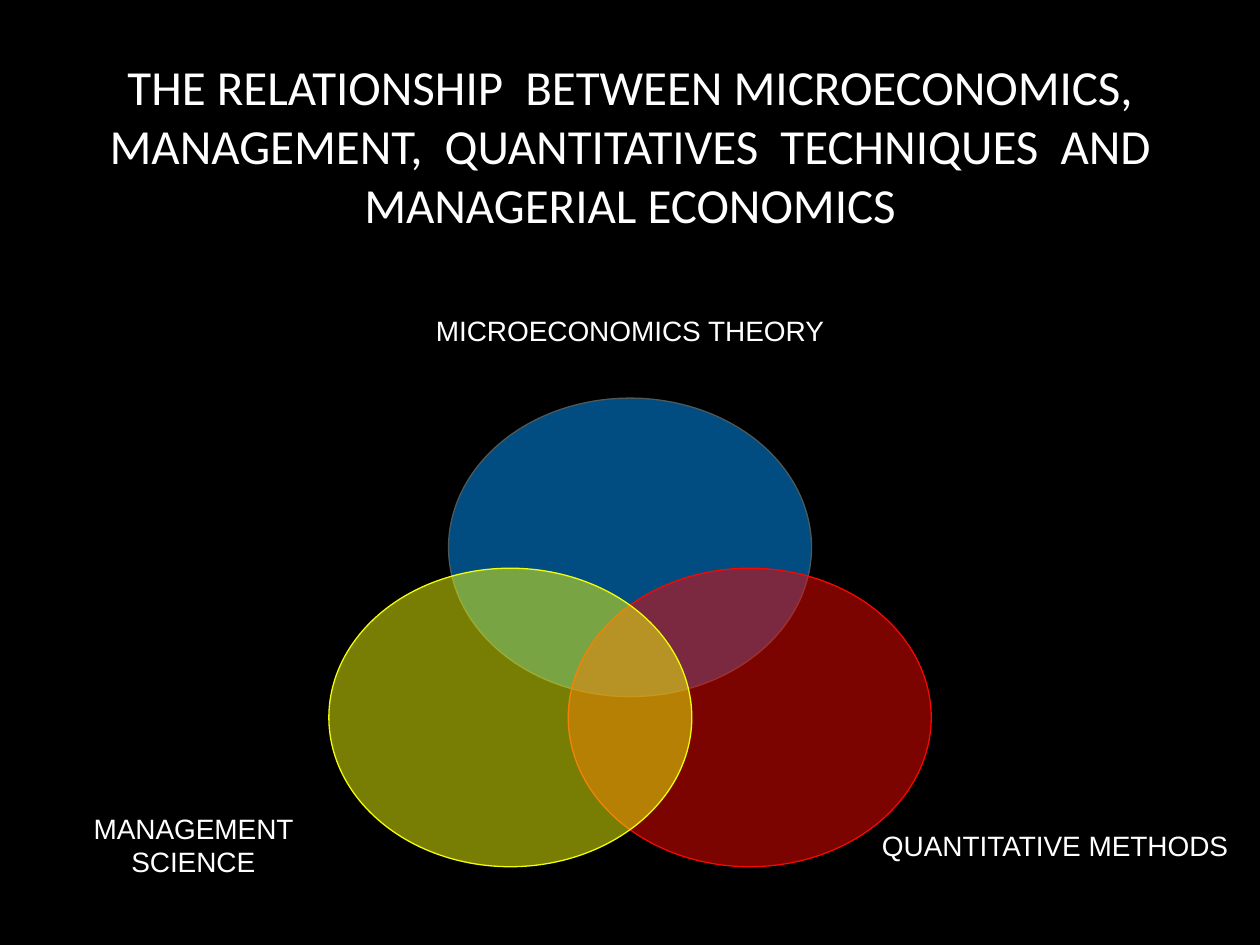
from pptx import Presentation
from pptx.dml.color import RGBColor
from pptx.enum.shapes import MSO_SHAPE as Shape
from pptx.enum.text import MSO_ANCHOR as Anchor, PP_ALIGN as Align
from pptx.oxml.ns import qn
from pptx.util import Pt
from lxml.etree import SubElement

TITLE = ("THE RELATIONSHIP  BETWEEN MICROECONOMICS, MANAGEMENT,  "
         "QUANTITATIVES  TECHNIQUES  AND MANAGERIAL ECONOMICS")

SETS = [
    dict(label="MICROECONOMICS THEORY", fill="0399FF", line="4B595B",
         side=0, row=0, label_at=(360, 189), label_width=262),
    dict(label="QUANTITATIVE METHODS", fill="F60802", line="F60802",
         side=1, row=1, label_at=(603, 482.75), label_width=211),
    dict(label="MANAGEMENT SCIENCE", fill="F1FD09", line="F1FD09",
         side=-1, row=1, label_at=(110.5, 482.75), label_width=185),
]

THEME = dict(
    background="000000", text="FFFFFF",
    title_font="Calibri", title_size=28,
    label_font="Arial", label_size=16,
    line_width=0.75, opacity=50,
)

SLIDE_W, SLIDE_H = 720, 540
OVAL_W, OVAL_H = 207.4, 170.6
CENTER_X, TOP_Y = SLIDE_W / 2, 312.8
STEP_X, STEP_Y = 68.4, 97.2
LABEL_H = 42.5


def color(name):
    return RGBColor.from_string(name)


def centered(cx, cy, w, h):
    return Pt(cx - w / 2), Pt(cy - h / 2), Pt(w), Pt(h)


def add_text(s, text, box, font, size, anchor, wrap):
    tf = s.shapes.add_textbox(*box).text_frame
    tf.word_wrap = wrap
    tf.vertical_anchor = anchor
    p = tf.paragraphs[0]
    p.text = text
    p.alignment = Align.CENTER
    p.font.name = font
    p.font.size = Pt(size)
    p.font.color.rgb = color(THEME["text"])
    return tf


def add_oval(s, item):
    cx = CENTER_X + item["side"] * STEP_X
    cy = TOP_Y + item["row"] * STEP_Y
    sp = s.shapes.add_shape(Shape.OVAL, *centered(cx, cy, OVAL_W, OVAL_H))
    sp.shadow.inherit = False
    sp.fill.solid()
    sp.fill.fore_color.rgb = color(item["fill"])
    fill = sp.fill._xPr.find(qn("a:solidFill"))
    SubElement(fill[0], qn("a:alpha"), val=str(THEME["opacity"] * 1000))
    sp.line.color.rgb = color(item["line"])
    sp.line.width = Pt(THEME["line_width"])


def add_label(s, item):
    box = centered(*item["label_at"], item["label_width"], LABEL_H)
    tf = add_text(s, item["label"], box, THEME["label_font"],
                  THEME["label_size"], Anchor.MIDDLE, False)
    tf.margin_left = tf.margin_right = tf.margin_top = tf.margin_bottom = 0


def main():
    prs = Presentation()
    prs.slide_width, prs.slide_height = Pt(SLIDE_W), Pt(SLIDE_H)
    s = prs.slides.add_slide(prs.slide_layouts[6])
    s.background.fill.solid()
    s.background.fill.fore_color.rgb = color(THEME["background"])

    title_box = Pt(36), Pt(18), Pt(648), Pt(118.8)
    add_text(s, TITLE, title_box, THEME["title_font"],
             THEME["title_size"], Anchor.BOTTOM, True)
    for item in SETS:
        add_oval(s, item)
        add_label(s, item)
    prs.save("out.pptx")


if __name__ == "__main__":
    main()
